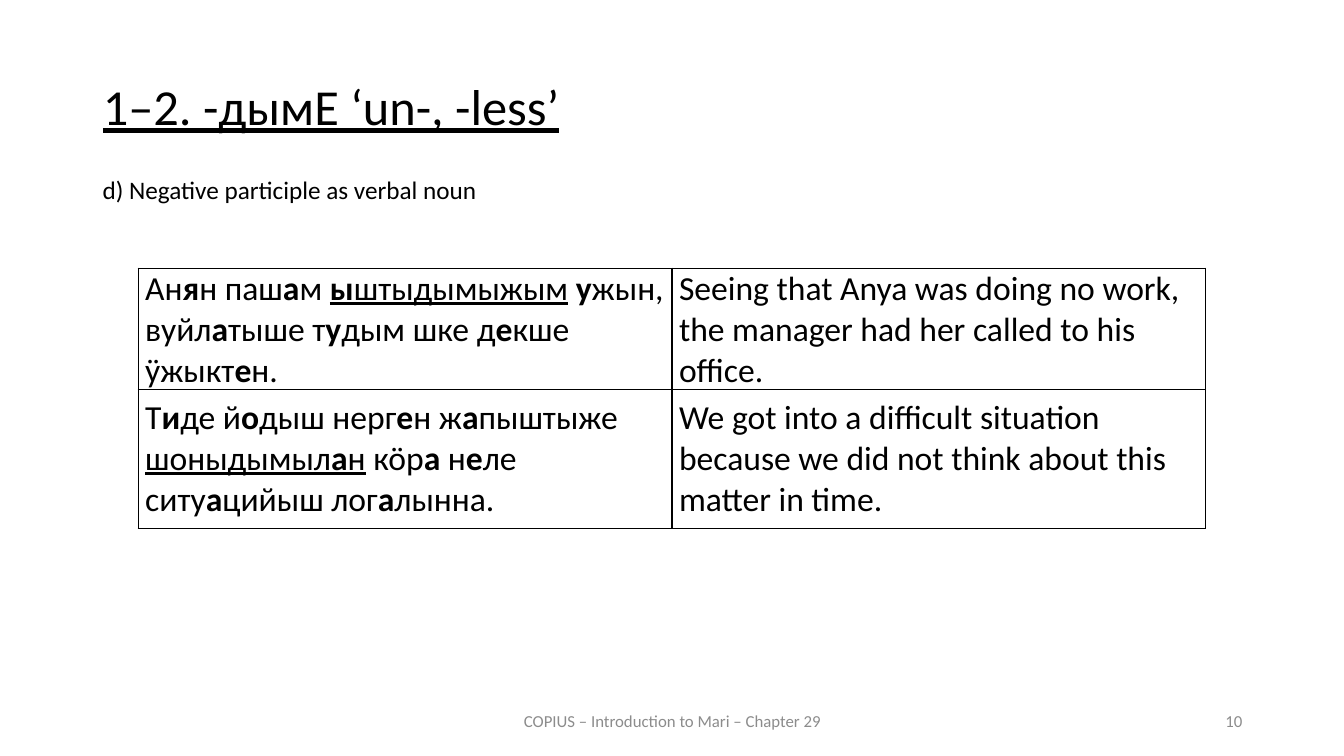
"""Build the slide on the Mari negative participle as verbal noun."""
from dataclasses import dataclass
from lxml.etree import SubElement as Sub
from pptx import Presentation
from pptx.dml.color import RGBColor as RGB
from pptx.enum.text import MSO_ANCHOR as Anchor, MSO_AUTO_SIZE as Fit, PP_ALIGN as Align
from pptx.oxml.ns import qn
from pptx.util import Inches, Pt


@dataclass(frozen=True)
class Theme:
    font: str = "Calibri"
    ink: str = "000000"
    gray: str = "8C8C8C"
    title: int = 36
    cell: int = 24
    body: int = 18
    foot: int = 12
    rule: int = 1


class Deck:
    def __init__(self, theme):
        self.theme = theme
        self.prs = Presentation()
        self.prs.slide_width, self.prs.slide_height = Inches(13.33), Inches(7.5)
        self.slide = self.prs.slides.add_slide(self.prs.slide_layouts[5])

    def style(self, run, size, color):
        font = run.font
        font.name, font.size = self.theme.font, Pt(size)
        font.color.rgb = RGB.from_string(color)
        return font

    def title(self, box, text):
        shape = self.slide.shapes.title
        shape.left, shape.top, shape.width, shape.height = map(Inches, box)
        frame = shape.text_frame
        frame.text = text
        frame.vertical_anchor = Anchor.TOP
        para = frame.paragraphs[0]
        para.alignment, para.line_spacing, para.space_before = Align.JUSTIFY, 0.9, Pt(12)
        self.style(para.runs[0], self.theme.title, self.theme.ink).underline = True

    def text(self, box, text, size, color, align=Align.LEFT, anchor=Anchor.TOP):
        frame = self.slide.shapes.add_textbox(*map(Inches, box)).text_frame
        frame.text = text
        frame.word_wrap, frame.vertical_anchor = True, anchor
        frame.auto_size = Fit.NONE if anchor == Anchor.MIDDLE else Fit.SHAPE_TO_FIT_TEXT
        para = frame.paragraphs[0]
        para.alignment = align
        self.style(para.runs[0], size, color)

    def foot(self, box, text, align):
        self.text(box, text, self.theme.foot, self.theme.gray, align, Anchor.MIDDLE)

    def mark(self, para, text):
        for i, part in enumerate(text.split("_")):
            for j, bit in enumerate(part.split("*")):
                if bit:
                    run = para.add_run()
                    run.text = bit
                    font = self.style(run, self.theme.cell, self.theme.ink)
                    font.bold, font.underline = j % 2 == 1, i % 2 == 1

    def border(self, cell):
        props = cell._tc.get_or_add_tcPr()
        for side in ("lnL", "lnR", "lnT", "lnB"):
            line = Sub(props, qn(f"a:{side}"), w=str(Pt(self.theme.rule)))
            Sub(Sub(line, qn("a:solidFill")), qn("a:srgbClr"), val=self.theme.ink)

    def table(self, box, highs, rows):
        size = len(rows), len(rows[0])
        table = self.slide.shapes.add_table(*size, *map(Inches, box)).table
        table.first_row = table.horz_banding = False
        for row, high, texts in zip(table.rows, highs, rows):
            row.height = Inches(high)
            for cell, text in zip(row.cells, texts):
                self.border(cell)
                cell.fill.background()
                cell.vertical_anchor = Anchor.MIDDLE
                cell.margin_left = cell.margin_right = Inches(0.07)
                cell.margin_top = cell.margin_bottom = 0
                self.mark(cell.text_frame.paragraphs[0], text)


def main():
    theme = Theme()
    deck = Deck(theme)
    deck.title((0.92, 0.76, 11.5, 0.83), "1–2. -дымЕ ‘un-, -less’")
    deck.foot((4.42, 6.95, 4.5, 0.4), "COPIUS – Introduction to Mari – Chapter 29", Align.CENTER)
    deck.foot((9.42, 6.95, 3, 0.4), "10", Align.RIGHT)
    deck.text((0.92, 1.68, 5.17, 0.4), "d) Negative participle as verbal noun",
              theme.body, theme.ink)
    deck.table((1.37, 2.66, 10.59, 2.53), (1.15, 1.38), [
        ("Ан*я*н паш*а*м _*ы*штыдымыжым_ *у*жын, вуйл*а*тыше т*у*дым шке д*е*кше ӱжыкт*е*н.",
         "Seeing that Anya was doing no work, the manager had her called to his office."),
        ("Т*и*де й*о*дыш нерг*е*н ж*а*пыштыже _шоныдымыл*а*н_ кӧр*а *н*е*ле ситу*а*цийыш лог*а*лынна.",
         "We got into a difficult situation because we did not think about this matter in time."),
    ])
    deck.prs.save("out.pptx")


if __name__ == "__main__":
    main()
